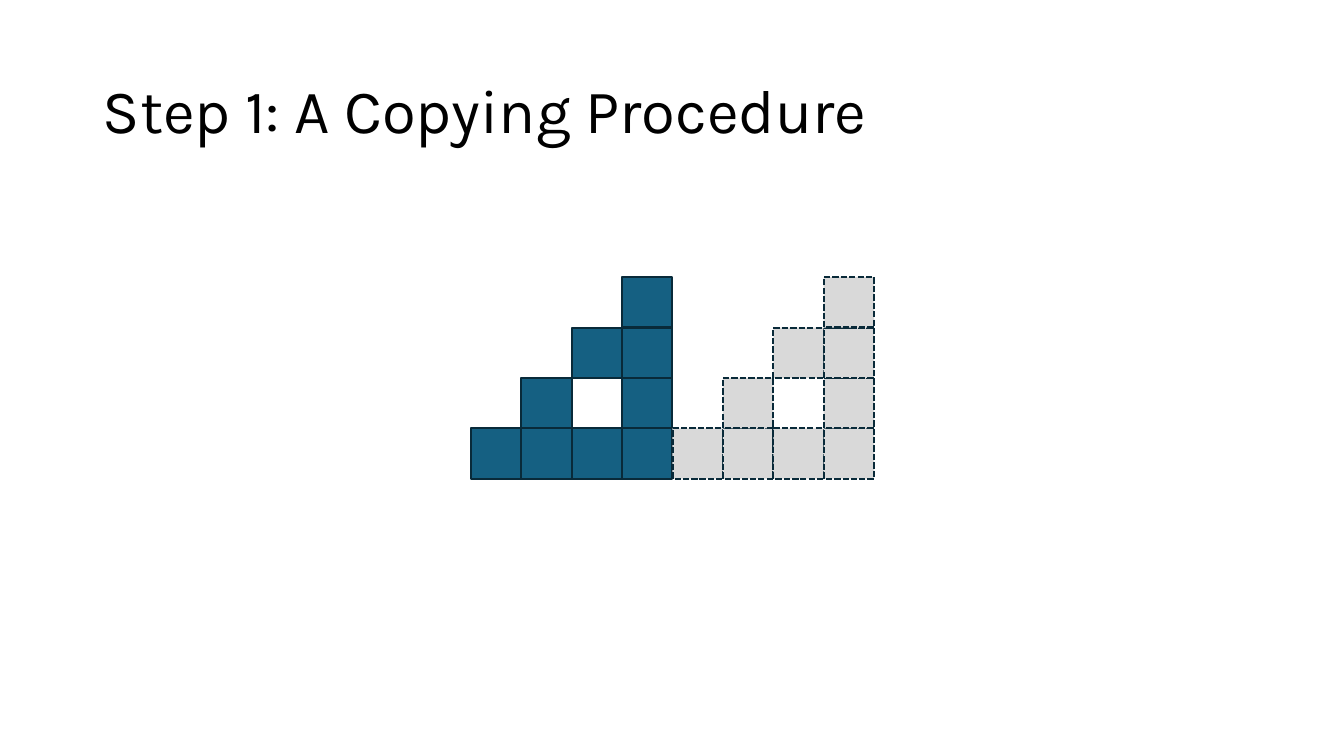
"""Build a slide showing a tiled triangle and the copy placed beside it."""
from pptx import Presentation
from pptx import util as u
from pptx.dml.color import RGBColor
from pptx.enum import dml, shapes, text

BLACK = RGBColor(0x00, 0x00, 0x00)
BLUE = RGBColor(0x15, 0x60, 0x82)
NAVY = RGBColor(0x09, 0x2A, 0x39)
GRAY = RGBColor(0xD9, 0xD9, 0xD9)

TILE = 0.5
TRIANGLE_LEFT, TRIANGLE_BOTTOM = 4.67, 4.75
TRIANGLE_CELLS = [(0, 0), (1, 0), (1, 1), (2, 0), (3, 0),
                  (3, 1), (2, 2), (3, 2), (3, 3)]
TRIANGLE_WIDTH = 4 * TILE


class TileSlide:
    """Hold the tile style and the current slide."""

    font_name = "Karla"
    title_size = u.Pt(44)
    line_width = u.Pt(1.5)

    def __init__(self, presentation):
        self.slide = presentation.slides.add_slide(presentation.slide_layouts[5])

    def title(self, words, left, top, width, height):
        """Place and format the title."""
        shape = self.slide.shapes.title
        shape.left, shape.top = u.Inches(left), u.Inches(top)
        shape.width, shape.height = u.Inches(width), u.Inches(height)
        frame = shape.text_frame
        frame.text = words
        frame.vertical_anchor = text.MSO_ANCHOR.MIDDLE
        paragraph = frame.paragraphs[0]
        paragraph.alignment = text.PP_ALIGN.LEFT
        paragraph.line_spacing = 0.9
        paragraph.font.name = self.font_name
        paragraph.font.size = self.title_size
        paragraph.font.color.rgb = BLACK

    def tile(self, left, top, fill, dash=None):
        """Draw one square tile."""
        shape = self.slide.shapes.add_shape(
            shapes.MSO_SHAPE.RECTANGLE, u.Inches(left), u.Inches(top),
            u.Inches(TILE), u.Inches(TILE))
        shape.shadow.inherit = False
        shape.fill.solid()
        shape.fill.fore_color.rgb = fill
        shape.line.color.rgb = NAVY
        shape.line.width = self.line_width
        if dash is not None:
            shape.line.dash_style = dash

    def triangle(self, left, bottom, fill, dash=None):
        """Draw the tiled triangle from its lower left corner."""
        for column, row in TRIANGLE_CELLS:
            self.tile(left + column * TILE, bottom - (row + 1) * TILE, fill, dash)


def main():
    """Build and save the presentation."""
    presentation = Presentation()
    presentation.slide_width = u.Inches(13.33)
    presentation.slide_height = u.Inches(7.5)

    tile_slide = TileSlide(presentation)
    tile_slide.title("Step 1: A Copying Procedure", 0.92, 0.4, 11.5, 1.45)
    tile_slide.triangle(TRIANGLE_LEFT, TRIANGLE_BOTTOM, BLUE)
    tile_slide.triangle(TRIANGLE_LEFT + TRIANGLE_WIDTH, TRIANGLE_BOTTOM, GRAY,
                        dml.MSO_LINE.SQUARE_DOT)

    presentation.save("out.pptx")


if __name__ == "__main__":
    main()
